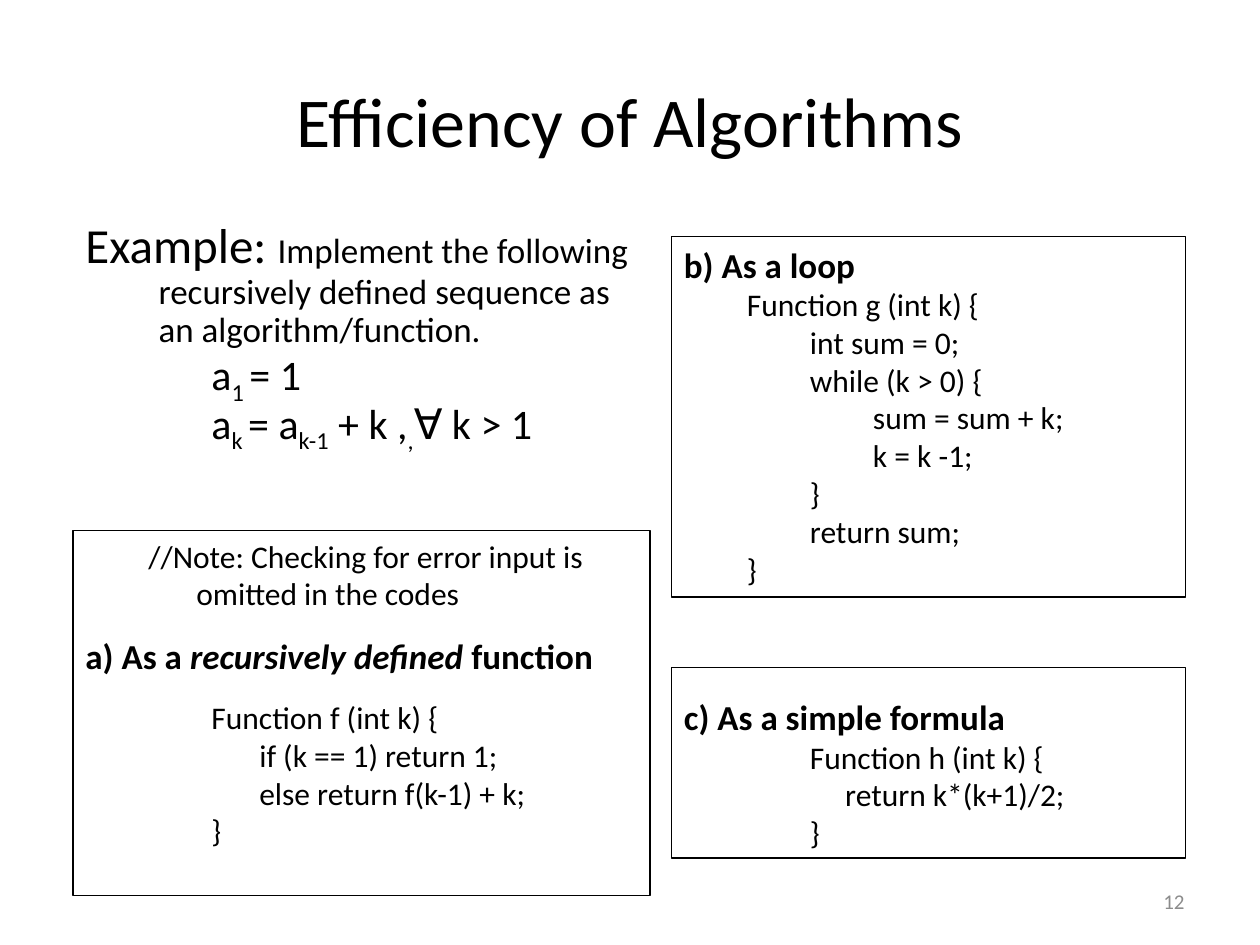
from pptx import Presentation
from pptx.dml.color import RGBColor
from pptx.enum.shapes import MSO_SHAPE
from pptx.enum.text import MSO_ANCHOR, PP_ALIGN
from pptx.util import Inches, Pt

RECT = MSO_SHAPE.RECTANGLE
TOP, MIDDLE = MSO_ANCHOR.TOP, MSO_ANCHOR.MIDDLE
LEFT, CENTER, RIGHT = PP_ALIGN.LEFT, PP_ALIGN.CENTER, PP_ALIGN.RIGHT
BLACK = RGBColor(0x00, 0x00, 0x00)
GRAY = RGBColor(0x8C, 0x8C, 0x8C)
FONT = "Calibri"


def run(text, size=18, **style):
    return text, size, style


def para(*runs, margin=0, hang=0, before=0, spacing=1):
    return runs, margin, hang, before, spacing


def code(margin, text, before=0):
    return para(run(text), margin=margin, before=before)


def heading(text):
    return run(text, 20, bold=True)


def formula(*parts):
    runs = [run(text, 24, baseline=base) for text, base in parts]
    return para(*runs, margin=1.42, hang=0.42, before=4.8, spacing=0.7)


SUB = "-25000"
NORMAL = "0"

TITLE = [para(run("Efficiency of Algorithms", 40))]
NUMBER = [para(run("12", 12, color=GRAY))]
EXAMPLE = [
    para(run("Example: ", 28),
         run("Implement the following recursively defined sequence as an algorithm/function.", 20),
         margin=0.58, hang=0.58, before=5.6, spacing=0.9),
    formula(("a", NORMAL), ("1 ", SUB), ("= 1", NORMAL)),
    formula(("a", NORMAL), ("k ", SUB), ("= a", NORMAL), ("k-1", SUB),
            (" + k ,", NORMAL), (",", SUB), ("∀ k > 1", NORMAL)),
]
RECURSION = [
    para(run("//Note: Checking for error input is omitted in the codes"), margin=0.88, hang=0.38),
    para(heading("a) As a "), run("recursively defined ", 20, bold=True, italic=True),
         heading("function"), margin=0.38, hang=0.38, before=12.8),
    code(1, "Function f (int k) {", before=12.2),
    code(1.38, "if (k == 1) return 1;"),
    code(1.38, "else return f(k-1) + k;"),
    code(1, "}"),
]
CLOSED_FORM = [
    para(heading("c) As a simple formula")),
    code(1, "Function h (int k) {"),
    code(1.28, "return k*(k+1)/2;"),
    code(1, "}"),
]
LOOP = [
    para(heading("b) As a loop")),
    code(0.5, "Function g (int k) {"),
    code(1, "int sum = 0;"),
    code(1, "while (k > 0) {"),
    code(1.5, "sum = sum + k;"),
    code(1.5, "k = k -1;"),
    code(1, "}"),
    code(1, "return sum;"),
    code(0.5, "}"),
]

TEXTS = [
    ((7.17, 6.95, 2.33, 0.4), NUMBER, RIGHT, MIDDLE),
    ((0.5, 0.47, 9, 0.95), TITLE, CENTER, MIDDLE),
    ((0.58, 1.71, 4.58, 2.17), EXAMPLE, LEFT, TOP),
]
BOXES = [
    ((0.58, 4.21, 4.58, 2.9), RECURSION, 0.05),
    ((5.33, 5.3, 4.08, 1.51), CLOSED_FORM, 0.22),
    ((5.33, 1.88, 4.08, 2.86), LOOP, 0.05),
]


def add_run(p, text, size, style):
    r = p.add_run()
    r.text = text
    r.font.name = FONT
    r.font.size = Pt(size)
    r.font.bold = style.get("bold", False)
    r.font.italic = style.get("italic", False)
    r.font.color.rgb = style.get("color", BLACK)
    if "baseline" in style:
        r.font._element.set("baseline", style["baseline"])


def write(tf, paras, align=LEFT, anchor=TOP):
    tf.word_wrap = True
    tf.vertical_anchor = anchor
    for i, (runs, margin, hang, before, spacing) in enumerate(paras):
        p = tf.add_paragraph() if i else tf.paragraphs[0]
        p.alignment = align
        p.space_before = Pt(before)
        p.line_spacing = spacing
        pPr = p._p.get_or_add_pPr()
        pPr.set("marL", str(Inches(margin)))
        pPr.set("indent", str(Inches(-hang)))
        for text, size, style in runs:
            add_run(p, text, size, style)


def main():
    prs = Presentation()
    prs.slide_width, prs.slide_height = Inches(10), Inches(7.5)
    s = prs.slides.add_slide(prs.slide_layouts[6])
    for place, paras, align, anchor in TEXTS:
        sp = s.shapes.add_textbox(*map(Inches, place))
        write(sp.text_frame, paras, align, anchor)
    for place, paras, inset in BOXES:
        sp = s.shapes.add_shape(RECT, *map(Inches, place))
        sp.shadow.inherit = False
        sp.fill.background()
        sp.line.color.rgb = BLACK
        sp.line.width = Pt(0.75)
        sp.text_frame.margin_top = Inches(inset)
        write(sp.text_frame, paras)
    prs.save("out.pptx")


if __name__ == "__main__":
    main()
